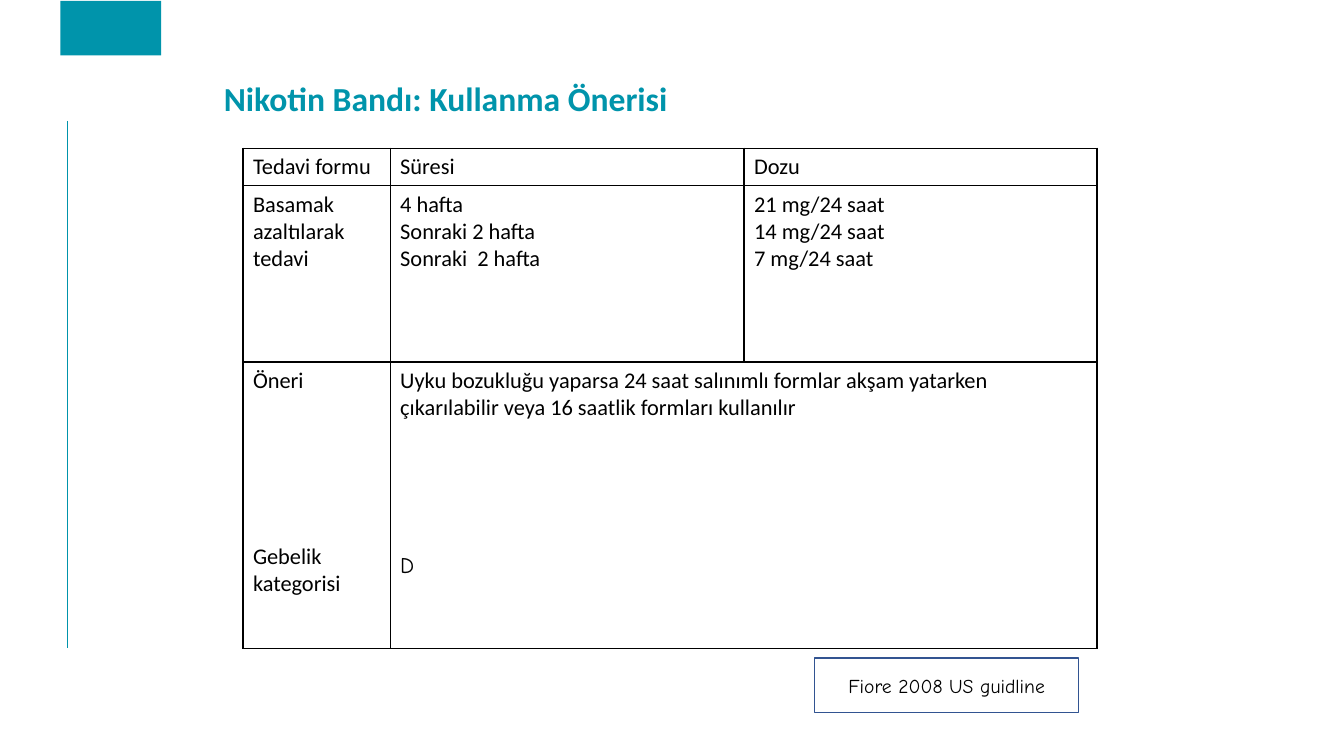
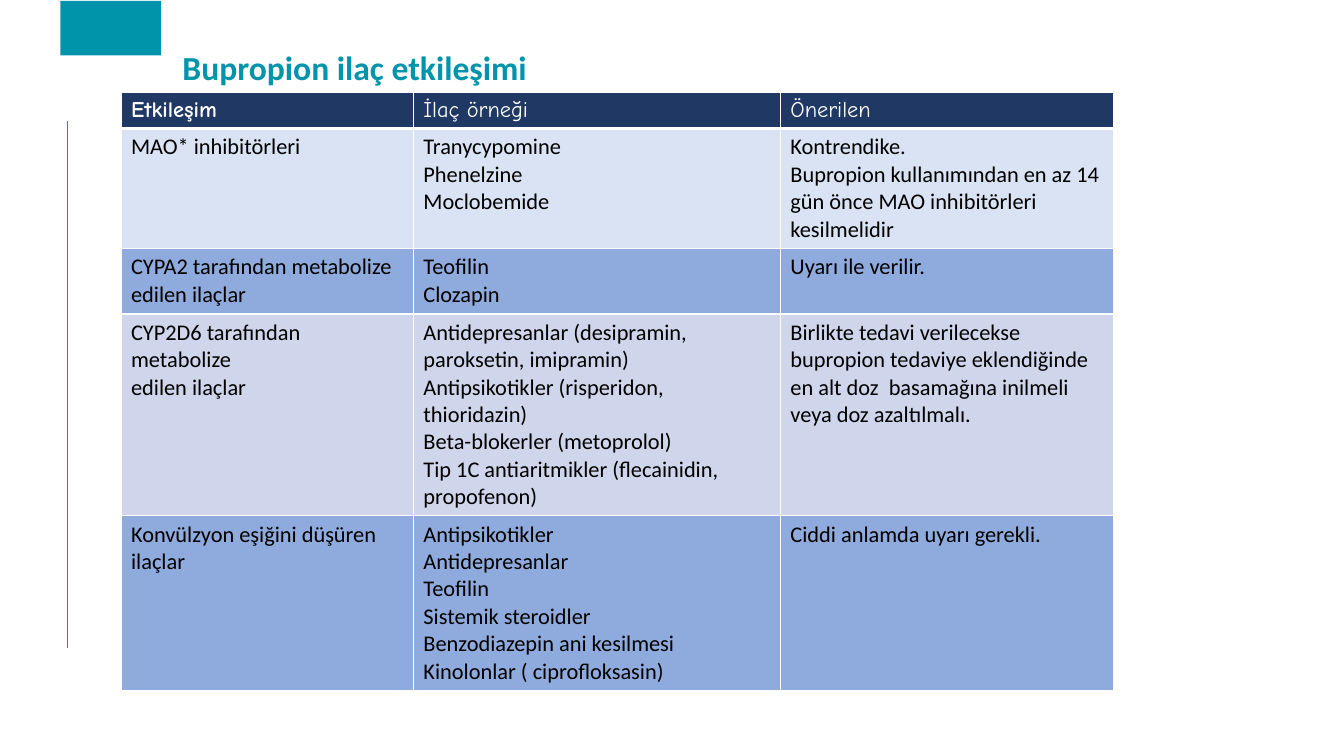
from dataclasses import dataclass

from lxml.etree import SubElement
from pptx import Presentation
from pptx.dml.color import RGBColor
from pptx.enum.shapes import MSO_CONNECTOR, MSO_SHAPE
from pptx.enum.text import MSO_ANCHOR, MSO_AUTO_SIZE, PP_ALIGN
from pptx.oxml.ns import qn
from pptx.util import Inches, Pt

COLOURS = {
    "teal": "0094AB",
    "black": "000000",
    "white": "FFFFFF",
    "navy": "203864",
    "outline": "325491",
    "pale": "DAE3F3",
    "blue": "8FAADC",
    "lilac": "CFD5EA",
}
BODY_FONT = "Calibri"
ACCENT_FONT = "Comic Neue"

PATCH_ROWS = [
    ["Tedavi formu", "Süresi", "Dozu"],
    [
        "Basamak azaltılarak tedavi",
        "4 hafta\nSonraki 2 hafta\nSonraki  2 hafta",
        "21 mg/24 saat\n14 mg/24 saat\n7 mg/24 saat",
    ],
    [
        "Öneri",
        "Uyku bozukluğu yaparsa 24 saat salınımlı formlar akşam yatarken "
        "çıkarılabilir veya 16 saatlik formları kullanılır",
        "",
    ],
]
INTERACTION_ROWS = [
    ["Etkileşim", "İlaç örneği", "Önerilen"],
    [
        "MAO* inhibitörleri",
        "Tranycypomine\nPhenelzine\nMoclobemide",
        "Kontrendike.\nBupropion kullanımından en az 14 gün önce MAO "
        "inhibitörleri kesilmelidir",
    ],
    [
        "CYPA2 tarafından metabolize edilen ilaçlar",
        "Teofilin\nClozapin",
        "Uyarı ile verilir.",
    ],
    [
        "CYP2D6 tarafından metabolize\nedilen ilaçlar",
        "Antidepresanlar (desipramin,\nparoksetin, imipramin)\n"
        "Antipsikotikler (risperidon,\nthioridazin)\n"
        "Beta-blokerler (metoprolol)\n"
        "Tip 1C antiaritmikler (flecainidin,\npropofenon)",
        "Birlikte tedavi verilecekse bupropion tedaviye eklendiğinde "
        "en alt doz  basamağına inilmeli veya doz azaltılmalı.",
    ],
    [
        "Konvülzyon eşiğini düşüren\nilaçlar",
        "Antipsikotikler\nAntidepresanlar\nTeofilin\nSistemik steroidler\n"
        "Benzodiazepin ani kesilmesi\nKinolonlar ( ciprofloksasin)",
        "Ciddi anlamda uyarı gerekli.",
    ],
]


@dataclass
class TextStyle:
    """Font settings of a run."""

    size: float = 16
    font: str = BODY_FONT
    colour: str = "black"
    bold: bool = False


def colour(name):
    """Return the named colour."""
    return RGBColor.from_string(COLOURS[name])


def add_span(para, text, style):
    """Add one formatted run to a paragraph."""
    span = para.add_run()
    span.text = text
    span.font.size = Pt(style.size)
    span.font.name = style.font
    span.font.bold = style.bold
    span.font.color.rgb = colour(style.colour)


def write_lines(frame, text, style):
    """Write each line of the text as a paragraph."""
    for index, line in enumerate(text.split("\n")):
        para = frame.add_paragraph() if index else frame.paragraphs[0]
        add_span(para, line, style)


def add_spaced_line(cell, text, gap, style):
    """Add a paragraph to a cell after a vertical gap in points."""
    para = cell.text_frame.add_paragraph()
    para.space_before = Pt(gap)
    add_span(para, text, style)


def add_box(page, left, top, width, height, fill, line=None):
    """Add a flat rectangle."""
    box = page.shapes.add_shape(
        MSO_SHAPE.RECTANGLE, Inches(left), Inches(top), Inches(width), Inches(height)
    )
    box.shadow.inherit = False
    box.fill.solid()
    box.fill.fore_color.rgb = colour(fill)
    if line:
        box.line.color.rgb = colour(line)
        box.line.width = Pt(1)
    else:
        box.line.fill.background()
    return box


def add_rule(page, left, top, bottom):
    """Add a thin vertical teal line."""
    rule = page.shapes.add_connector(
        MSO_CONNECTOR.STRAIGHT, Inches(left), Inches(top), Inches(left), Inches(bottom)
    )
    rule.line.color.rgb = colour("teal")
    rule.line.width = Pt(1)
    SubElement(rule.element.spPr, qn("a:effectLst"))
    return rule


def decorate_layout(layout, page):
    """Give the layout the shared rule and corner band."""
    marks = [add_rule(page, 0.67, 1.2, 6.43), add_box(page, 0.6, 0.01, 1, 0.54, "teal")]
    for number, mark in enumerate(marks, start=101):
        mark.element.xpath(".//p:cNvPr")[0].set("id", str(number))
        layout.shapes.element.append(mark.element)


def add_title(page, text, left, top, width, height, anchor):
    """Place and fill the title placeholder."""
    title = page.shapes.title
    title.left, title.top = Inches(left), Inches(top)
    title.width, title.height = Inches(width), Inches(height)
    frame = title.text_frame
    frame.auto_size = MSO_AUTO_SIZE.NONE
    frame.word_wrap = True
    frame.vertical_anchor = anchor
    para = frame.paragraphs[0]
    para.alignment = PP_ALIGN.LEFT
    para.line_spacing = 0.9
    add_span(para, text, TextStyle(24, colour="teal", bold=True))


def set_borders(cell, line_colour, bottom=1):
    """Draw the four borders of a cell."""
    properties = cell._tc.get_or_add_tcPr()
    for side, width in (("L", 1), ("R", 1), ("T", 1), ("B", bottom)):
        border = SubElement(properties, qn(f"a:ln{side}"), w=str(Pt(width)))
        fill = SubElement(border, qn("a:solidFill"))
        SubElement(fill, qn("a:srgbClr"), val=COLOURS[line_colour])


def add_table(page, left, top, columns, heights, rows, line_colour, fills=None):
    """Add a table with plain borders and optional row fills."""
    table = page.shapes.add_table(
        len(rows), len(columns), Inches(left), Inches(top),
        Inches(sum(columns)), Inches(sum(heights)),
    ).table
    table.first_row = table.horz_banding = False
    for column, width in zip(table.columns, columns):
        column.width = Inches(width)
    for row_index, texts in enumerate(rows):
        table.rows[row_index].height = Inches(heights[row_index])
        is_header = bool(fills) and row_index == 0
        for column_index, text in enumerate(texts):
            cell = table.cell(row_index, column_index)
            set_borders(cell, line_colour, 3 if is_header else 1)
            if fills:
                cell.fill.solid()
                cell.fill.fore_color.rgb = colour(fills[row_index])
            else:
                cell.fill.background()
            style = TextStyle()
            if is_header:
                style = TextStyle(
                    font=ACCENT_FONT, colour="white", bold=column_index == 0
                )
            if text:
                write_lines(cell.text_frame, text, style)
    return table


def add_source(page, text):
    """Add the outlined source box."""
    box = add_box(page, 8.08, 6.53, 2.62, 0.54, "white", "outline")
    frame = box.text_frame
    frame.word_wrap = True
    frame.vertical_anchor = MSO_ANCHOR.MIDDLE
    frame.paragraphs[0].alignment = PP_ALIGN.CENTER
    add_span(frame.paragraphs[0], text, TextStyle(14, ACCENT_FONT))


def build_patch_page(page):
    """Build the nicotine patch slide."""
    add_title(
        page, "Nikotin Bandı: Kullanma Önerisi", 2.12, 0.64, 9.1, 0.59, MSO_ANCHOR.BOTTOM
    )
    table = add_table(
        page, 2.41, 1.47, [1.46, 3.51, 3.5], [0.37, 1.75, 2.84], PATCH_ROWS, "black"
    )
    table.cell(2, 1).merge(table.cell(2, 2))
    add_spaced_line(table.cell(2, 0), "Gebelik kategorisi", 106, TextStyle())
    add_spaced_line(table.cell(2, 1), "D", 94, TextStyle(font=ACCENT_FONT))
    add_source(page, "Fiore 2008 US guidline")


def build_interaction_page(page):
    """Build the bupropion interaction slide."""
    add_title(
        page, "Bupropion ilaç etkileşimi", 1.71, 0.32, 9.59, 0.75, MSO_ANCHOR.MIDDLE
    )
    add_table(
        page, 1.2, 0.92, [2.9, 3.64, 3.31], [0.34, 1.19, 0.65, 2, 1.73],
        INTERACTION_ROWS, "white", ["navy", "pale", "blue", "lilac", "blue"],
    )


def main():
    """Build and save the deck."""
    deck = Presentation()
    deck.slide_width, deck.slide_height = Inches(13.33), Inches(7.5)
    layout = deck.slide_layouts.get_by_name("Title Only")
    patch_page = deck.slides.add_slide(layout)
    decorate_layout(layout, patch_page)
    build_patch_page(patch_page)
    build_interaction_page(deck.slides.add_slide(layout))
    deck.save("out.pptx")


if __name__ == "__main__":
    main()
